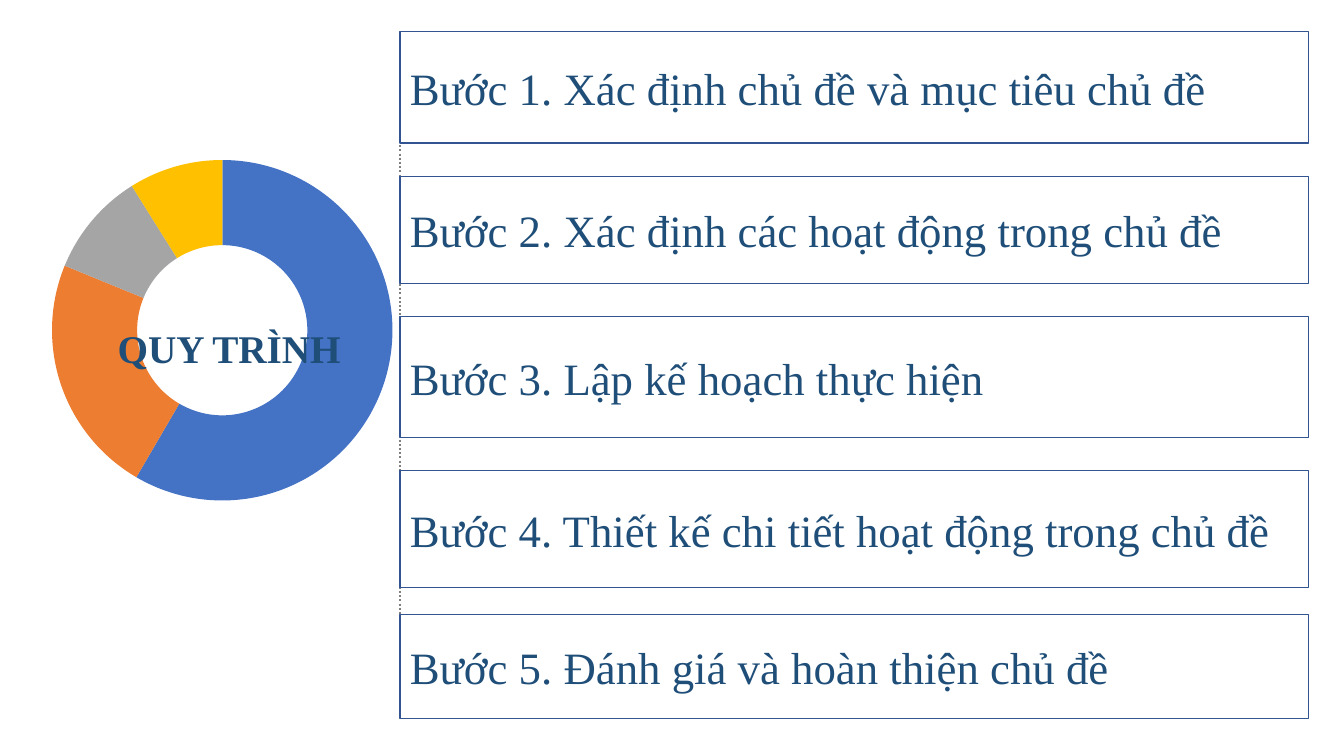
import pptx
import pptx.chart.data
import pptx.dml.color
import pptx.enum.chart
import pptx.enum.dml
import pptx.enum.shapes
import pptx.enum.text
import pptx.oxml
import pptx.oxml.ns
import pptx.util
from pptx.util import Cm

NAVY = pptx.dml.color.RGBColor(0x1F, 0x4E, 0x79)
BORDER = pptx.dml.color.RGBColor(0x32, 0x54, 0x91)
GREY = pptx.dml.color.RGBColor(0x7F, 0x7F, 0x7F)
BLACK = pptx.dml.color.RGBColor(0x00, 0x00, 0x00)
SEGMENT_COLOURS = [
    pptx.dml.color.RGBColor(0x44, 0x72, 0xC4),
    pptx.dml.color.RGBColor(0xED, 0x7D, 0x31),
    pptx.dml.color.RGBColor(0xA5, 0xA5, 0xA5),
    pptx.dml.color.RGBColor(0xFF, 0xC0, 0x00),
]
SEGMENT_VALUES = (59, 23, 10, 9)
PLOT_LAYOUT = {"x": 0.044, "y": 0.111, "w": 0.838, "h": 0.854}
HOLE_PERCENT = 75

STEPS = [
    ("Bước 1. Xác định chủ đề và mục tiêu chủ đề", 0, 2.82),
    ("Bước 2. Xác định các hoạt động trong chủ đề", 3.66, 2.69),
    ("Bước 3. Lập kế hoạch thực hiện", 7.19, 3.05),
    ("Bước 4. Thiết kế chi tiết hoạt động trong chủ đề", 11.07, 2.95),
    ("Bước 5. Đánh giá và hoàn thiện chủ đề", 14.7, 2.62),
]


def write_text(shape, text, size, alignment, bold=False):
    frame = shape.text_frame
    frame.word_wrap = True
    frame.vertical_anchor = pptx.enum.text.MSO_ANCHOR.MIDDLE
    para = frame.paragraphs[0]
    para.text = text
    para.alignment = alignment
    para.font.name = "Times New Roman"
    para.font.size = pptx.util.Pt(size)
    para.font.bold = bold
    para.font.color.rgb = NAVY


def place_plot(chart):
    qn = pptx.oxml.ns.qn
    plot_area = chart.element.find(".//" + qn("c:plotArea"))
    for layout in plot_area.findall(qn("c:layout")):
        plot_area.remove(layout)
    parts = '<c:layoutTarget val="inner"/><c:xMode val="edge"/><c:yMode val="edge"/>'
    parts += "".join(f'<c:{key} val="{value}"/>' for key, value in PLOT_LAYOUT.items())
    plot_area.insert(0, pptx.oxml.parse_xml(
        f'<c:layout {pptx.oxml.ns.nsdecls("c")}>'
        f"<c:manualLayout>{parts}</c:manualLayout></c:layout>"
    ))
    plot_area.find(".//" + qn("c:holeSize")).set("val", str(HOLE_PERCENT))


def add_process_ring(page, left, top, width, height):
    chart_data = pptx.chart.data.CategoryChartData()
    chart_data.categories = ["1", "2", "3", "4"]
    chart_data.add_series("Series 1", SEGMENT_VALUES)
    chart = page.shapes.add_chart(
        pptx.enum.chart.XL_CHART_TYPE.DOUGHNUT,
        Cm(left), Cm(top), Cm(width), Cm(height), chart_data,
    ).chart
    chart.has_title = False
    chart.has_legend = False
    chart.font.name = "Calibri"
    chart.font.size = pptx.util.Pt(18)
    chart.font.color.rgb = BLACK
    plot = chart.plots[0]
    plot.vary_by_categories = True
    for index, colour in enumerate(SEGMENT_COLOURS):
        segment = plot.series[0].points[index].format
        segment.fill.solid()
        segment.fill.fore_color.rgb = colour
        segment.line.fill.background()
    place_plot(chart)

    title = page.shapes.add_textbox(
        Cm(left + 1.7), Cm(top + 4.55), Cm(6.43), Cm(6.2)
    )
    write_text(title, "QUY TRÌNH", 28, pptx.enum.text.PP_ALIGN.CENTER, bold=True)


def add_steps(page, left, top, width):
    guide = page.shapes.add_connector(
        pptx.enum.shapes.MSO_CONNECTOR.STRAIGHT,
        Cm(left), Cm(top + 2.23), Cm(left), Cm(top + 17.24),
    )
    guide.line.color.rgb = GREY
    guide.line.width = pptx.util.Pt(1.5)
    guide.line.dash_style = pptx.enum.dml.MSO_LINE.ROUND_DOT
    guide.element.spPr.append(
        pptx.oxml.parse_xml(f'<a:effectLst {pptx.oxml.ns.nsdecls("a")}/>')
    )
    for text, offset, height in STEPS:
        box = page.shapes.add_shape(
            pptx.enum.shapes.MSO_SHAPE.RECTANGLE,
            Cm(left), Cm(top + offset), Cm(width), Cm(height),
        )
        box.shadow.inherit = False
        box.fill.background()
        box.line.color.rgb = BORDER
        box.line.width = pptx.util.Pt(1)
        write_text(box, text, 32, pptx.enum.text.PP_ALIGN.JUSTIFY)


def main():
    deck = pptx.Presentation()
    deck.slide_width = Cm(33.87)
    deck.slide_height = Cm(19.05)
    page = deck.slides.add_slide(deck.slide_layouts[6])
    add_process_ring(page, 0.86, 1.12, 10.24, 13.39)
    add_steps(page, 10.08, 0.79, 22.89)
    deck.save("out.pptx")


if __name__ == "__main__":
    main()
